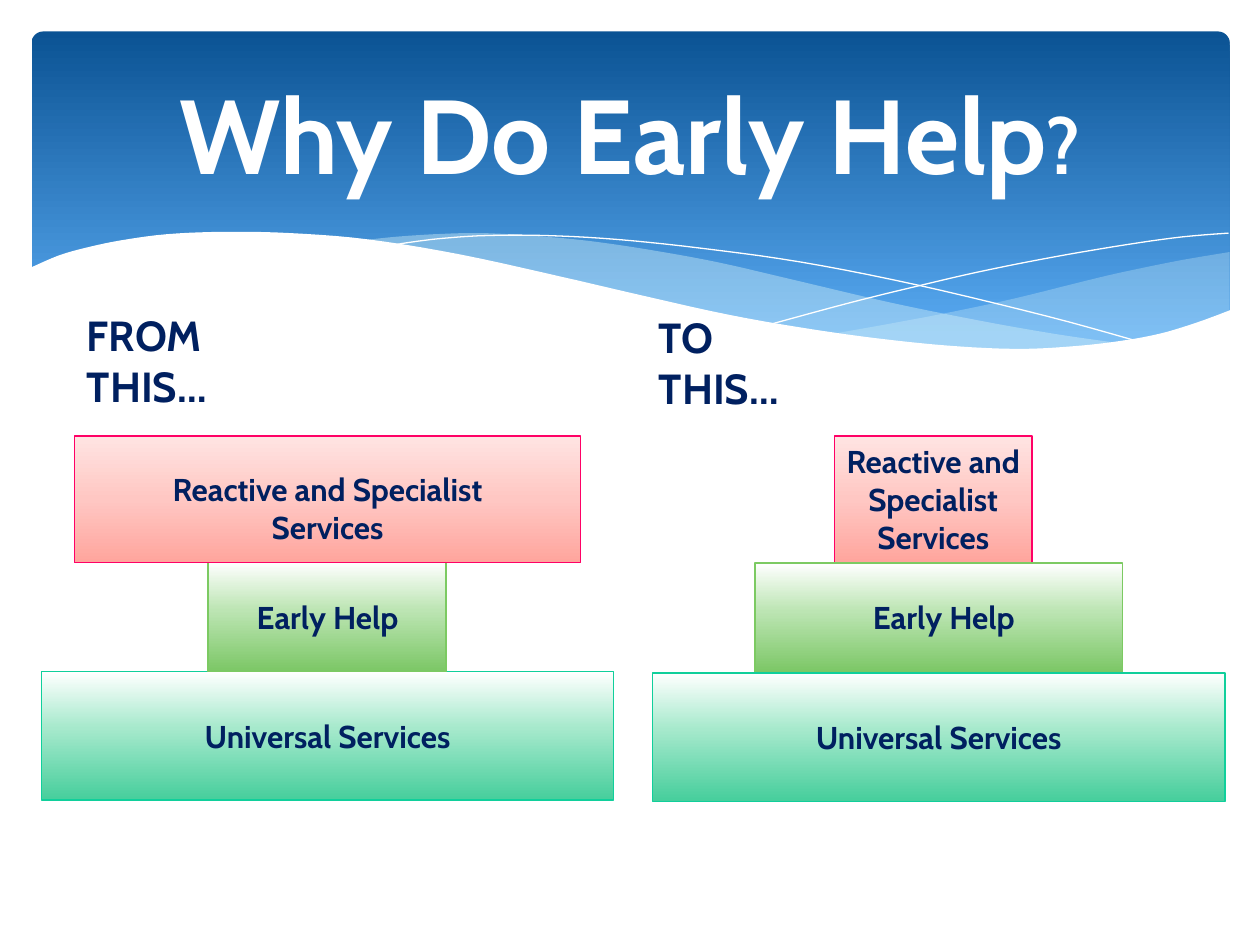
from dataclasses import dataclass
from lxml import etree
from pptx import Presentation
from pptx.dml.color import RGBColor
from pptx.enum import shapes, text
from pptx.oxml.ns import qn
from pptx.util import Pt

FONT, NAVY, WHITE, ICE = "Cabin", "002060", "FFFFFF", "DBF5F9"
Point = tuple[float, float]
Stops = list[tuple[int, str]]


@dataclass
class Box:
    left: float
    top: float
    width: float
    height: float

    def spread(self) -> list[int]:
        return [Pt(v) for v in (self.left, self.top, self.width, self.height)]


@dataclass
class Run:
    words: str
    size: float
    hue: str = NAVY


@dataclass
class Kind:
    label: str
    stops: Stops
    edge: str


@dataclass
class Tier:
    kind: Kind
    block: Box
    label: Box


def tint(code: str) -> RGBColor:
    return RGBColor.from_string(code)


def shade(shape, stops: Stops) -> None:
    shape.fill.gradient()
    shape.fill.gradient_angle = 270
    ramp = shape._element.spPr.find(qn("a:gradFill")).find(qn("a:gsLst"))
    for old in list(ramp):
        ramp.remove(old)
    for spot, code in stops:
        stop = etree.SubElement(ramp, qn("a:gs"), pos=str(spot * 1000))
        etree.SubElement(stop, qn("a:srgbClr"), val=code)


def block(slide, form, box: Box, stops: Stops, edge: str = ""):
    shape = slide.shapes.add_shape(form, *box.spread())
    shape.shadow.inherit = False
    shade(shape, stops)
    if edge:
        shape.line.color.rgb = tint(edge)
        shape.line.width = Pt(0.75)
    else:
        shape.line.fill.background()
    return shape


def write(slide, box: Box, runs: list[Run], align=text.PP_ALIGN.CENTER,
          anchor=text.MSO_ANCHOR.TOP, grow: bool = True) -> None:
    frame = slide.shapes.add_textbox(*box.spread()).text_frame
    frame.word_wrap = True
    frame.vertical_anchor = anchor
    if grow:
        frame.auto_size = text.MSO_AUTO_SIZE.SHAPE_TO_FIT_TEXT
    line = frame.paragraphs[0]
    line.alignment = align
    for item in runs:
        run = line.add_run()
        run.text = item.words
        run.font.name, run.font.size, run.font.bold = FONT, Pt(item.size), True
        run.font.color.rgb = tint(item.hue)


def smooth(knots: list[Point], steps: int = 5) -> list[Point]:
    ends = [knots[0], *knots, knots[-1]]
    curve = [knots[0]]
    for a, b, c, d in zip(ends, ends[1:], ends[2:], ends[3:]):
        for step in range(1, steps + 1):
            t = step / steps
            curve.append(tuple(
                (2 * q + (r - p) * t + (2 * p - 5 * q + 4 * r - s) * t ** 2
                 + (3 * q - p - 3 * r + s) * t ** 3) / 2
                for p, q, r, s in zip(a, b, c, d)))
    return curve


def trace(slide, dots: list[Point], fill: str = "", alpha: int = 100) -> None:
    spots = [(Pt(x), Pt(y)) for x, y in dots]
    pen = slide.shapes.build_freeform(*spots[0], scale=1.0)
    pen.add_line_segments(spots[1:], close=bool(fill))
    shape = pen.convert_to_shape()
    shape.shadow.inherit = False
    if not fill:
        shape.fill.background()
        shape.line.color.rgb = tint(WHITE)
        shape.line.width = Pt(0)
        return
    shape.fill.solid()
    shape.fill.fore_color.rgb = tint(fill)
    shape.line.fill.background()
    if alpha < 100:
        clr = shape._element.spPr.find(qn("a:solidFill"))[0]
        etree.SubElement(clr, qn("a:alpha"), val=str(alpha * 1000))


RIGHT_TOP = [(702.7, 144), (673.2, 149), (641.5, 155.5), (619.9, 160.6), (579.6, 170.6),
             (542.2, 178.6), (508.3, 185), (475.9, 190.8)]
RIGHT_LOW = [(475.9, 190.8), (497.5, 193.7), (527, 197.3), (553.7, 199.4), (586.1, 200.2),
             (614.9, 198.7), (640.1, 195.8), (663.1, 190.8), (683.3, 185), (702.7, 177.8)]
MID_TOP = [(643, 196.6), (602.6, 190.8), (558, 182.9), (508.3, 172.8), (452.9, 159.8),
           (409.7, 149.8), (370.1, 142.6), (334.8, 137.5), (302.4, 134.6), (273.6, 133.2),
           (247.7, 133.9), (225.4, 135.4), (205.9, 137.5)]
MID_LOW = [(205.9, 137.5), (246.2, 143.3), (275.8, 149), (323.3, 159.8), (381.6, 172.8),
           (432.7, 183.6), (478.8, 191.5), (519.8, 197.3), (556.6, 199.4), (589, 200.2),
           (617, 199.4), (643, 196.6)]
FALL = [(222.5, 140.4), (236.2, 138.2), (254.2, 136.1), (278.6, 134.6), (311.8, 134.6),
        (352.1, 136.8), (400.3, 141.8), (457.9, 149.8), (523.4, 162.7), (598.3, 180.7),
        (653, 195.8)]
RISE = [(441.4, 185), (483.8, 173.5), (518.4, 164.9), (558.7, 155.5), (601.9, 146.9),
        (644.4, 139.7), (675.4, 135.4), (702, 133.2)]
CREST = [(703.4, 177.1), (684, 184.3), (662.4, 190.8), (638.6, 195.1), (612, 198),
         (582.5, 199.4), (547.9, 198), (509.8, 194.4), (466.6, 188.6), (416.9, 180),
         (362.2, 167.8), (321.8, 158.4), (262.8, 145.4), (210.2, 136.8), (165.6, 133.2),
         (127.4, 132.5), (95, 133.9), (68.4, 137.5), (48.2, 141.8), (33.1, 146.2),
         (16.6, 153.4)]
BASE = [(16.6, 236.9), (703.4, 236.9)]

REACT = Kind("Reactive and Specialist Services",
             [(0, "FFE4E2"), (50, "FFC7C3"), (100, "FFA59D")], "FF0066")
EARLY = Kind("Early Help", [(0, WHITE), (44, "BCE5B3"), (100, "7CC766")], "7CCA62")
WHOLE = Kind("Universal Services", [(0, WHITE), (44, "A6E9CC"), (100, "46CE9C")], "10CF9B")

TOWERS = [
    [Tier(WHOLE, Box(23.6, 383.8, 327, 73.4), Box(42.5, 406.1, 289.4, 29)),
     Tier(EARLY, Box(118.8, 321.1, 136.1, 62.7), Box(136.1, 338.4, 102.2, 29)),
     Tier(REACT, Box(42.5, 249.1, 289.4, 72.4), Box(57.6, 265, 259.2, 50.8))],
    [Tier(REACT, Box(476.8, 249.1, 113, 72.4), Box(475.3, 249.1, 116, 72.7)),
     Tier(EARLY, Box(431.5, 321.8, 209.8, 62.4), Box(488.2, 338.4, 102.2, 29)),
     Tier(WHOLE, Box(373, 384.5, 327, 73.4), Box(391.7, 406.8, 289.4, 29))],
]


def main() -> None:
    deck = Presentation()
    deck.slide_width, deck.slide_height = Pt(720), Pt(540)
    slide = deck.slides.add_slide(deck.slide_layouts[6])

    banner = block(slide, shapes.MSO_SHAPE.ROUNDED_RECTANGLE, Box(18, 18, 684.7, 194.4),
                   [(0, "0B5394"), (90, "59AAF2")])
    banner.adjustments[0] = 0.034
    trace(slide, smooth(RIGHT_TOP) + smooth(RIGHT_LOW), ICE, 29)
    trace(slide, smooth(MID_TOP) + smooth(MID_LOW), ICE, 40)
    for curve in (FALL, RISE):
        trace(slide, smooth(curve))
    trace(slide, smooth(CREST) + BASE, WHITE)

    write(slide, Box(36, 26.6, 648, 98.6),
          [Run("Why Do Early Help", 60, WHITE), Run("?", 44, WHITE)],
          anchor=text.MSO_ANCHOR.MIDDLE, grow=False)
    for words, box in (("FROM THIS…", Box(42.5, 173.5, 121.7, 65.5)),
                       ("TO THIS…", Box(369.4, 174.7, 108, 65.5))):
        write(slide, box, [Run(words, 24)], text.PP_ALIGN.LEFT)

    for tower in TOWERS:
        for tier in tower:
            block(slide, shapes.MSO_SHAPE.RECTANGLE, tier.block,
                  tier.kind.stops, tier.kind.edge)
        for tier in tower:
            write(slide, tier.label, [Run(tier.kind.label, 18)])
    deck.save("out.pptx")


if __name__ == "__main__":
    main()
